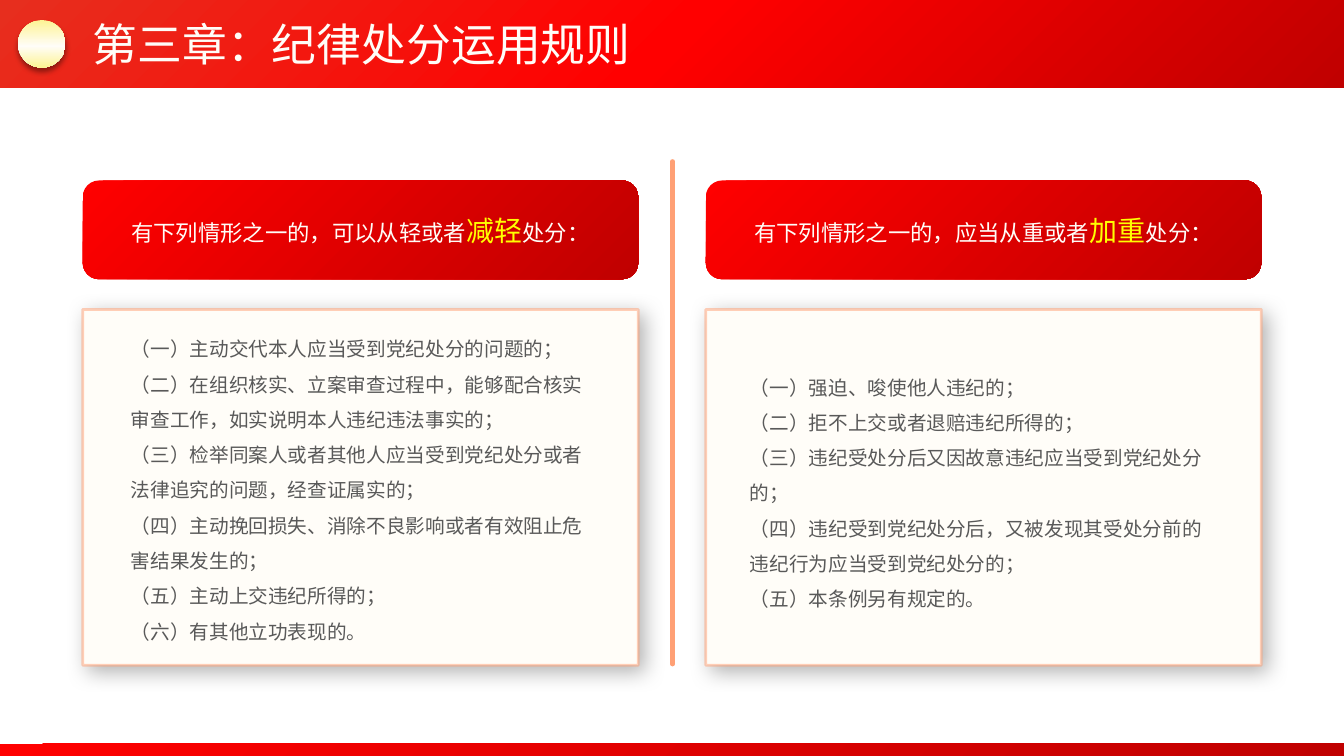
from dataclasses import dataclass

from lxml import etree
from pptx import Presentation
from pptx.dml.color import RGBColor
from pptx.enum.shapes import MSO_CONNECTOR, MSO_SHAPE
from pptx.enum.text import MSO_ANCHOR, MSO_AUTO_SIZE, PP_ALIGN
from pptx.oxml.ns import qn
from pptx.util import Inches, Pt

RECT, ROUNDED, OVAL = MSO_SHAPE.RECTANGLE, MSO_SHAPE.ROUNDED_RECTANGLE, MSO_SHAPE.OVAL
STRAIGHT = MSO_CONNECTOR.STRAIGHT
MIDDLE = MSO_ANCHOR.MIDDLE
GROW = MSO_AUTO_SIZE.SHAPE_TO_FIT_TEXT
CENTER = PP_ALIGN.CENTER


@dataclass(frozen=True)
class Theme:
    font: str = "Noto Sans CJK SC"
    cream: str = "FFFDF8"
    yellow: str = "FFFF00"
    peach: str = "FFA075"
    grey: str = "595959"
    black: str = "000000"
    red: tuple = ((0, "FF0000"), (100, "C00000"))
    header: tuple = ((0, "E72E1E"), (50, "FF0000"), (100, "C00000"))
    gold: tuple = ((0, "FDF394"), (55, "FFFDF8"), (100, "FDF394"))
    title_size: int = 32
    accent_size: int = 20
    heading_size: int = 16
    body_size: int = 14


THEME = Theme()
SLIDE_W, SLIDE_H = 13.33, 7.5
PANEL_W = 5.51

# Left edge, heading, text position and items of each panel
PANELS = [
    (0.82, ("有下列情形之一的，可以从轻或者", "减轻", "处分："), (1.2, 3.18, 4.83, 3.24), [
        "（一）主动交代本人应当受到党纪处分的问题的；",
        "（二）在组织核实、立案审查过程中，能够配合核实审查工作，如实说明本人违纪违法事实的；",
        "（三）检举同案人或者其他人应当受到党纪处分或者法律追究的问题，经查证属实的；",
        "（四）主动挽回损失、消除不良影响或者有效阻止危害结果发生的；",
        "（五）主动上交违纪所得的；",
        "（六）有其他立功表现的。",
    ]),
    (7, ("有下列情形之一的，应当从重或者", "加重", "处分："), (7.34, 3.56, 4.83, 2.54), [
        "（一）强迫、唆使他人违纪的；",
        "（二）拒不上交或者退赔违纪所得的；",
        "（三）违纪受处分后又因故意违纪应当受到党纪处分的；",
        "（四）违纪受到党纪处分后，又被发现其受处分前的违纪行为应当受到党纪处分的；",
        "（五）本条例另有规定的。",
    ]),
]


def rgb(color):
    return RGBColor.from_string(color)


def add_color(parent, color, alpha=100):
    clr = etree.SubElement(parent, qn("a:srgbClr"), val=color)
    if alpha < 100:
        etree.SubElement(clr, qn("a:alpha"), val=str(alpha * 1000))


def set_gradient(fill, props, stops, angle):
    """Clockwise gradient on a shape or run; props is the element holding the fill."""
    fill.gradient()
    fill.gradient_angle = 360 - angle
    stop_list = props.find(qn("a:gradFill")).find(qn("a:gsLst"))
    for old in list(stop_list):
        stop_list.remove(old)
    for pos, color in stops:
        add_color(etree.SubElement(stop_list, qn("a:gs"), pos=str(pos * 1000)), color)


def add_shadow(s, alpha, blur, dist, angle):
    effects = s._element.spPr.find(qn("a:effectLst"))
    shadow = etree.SubElement(
        effects, qn("a:outerShdw"), blurRad=str(Pt(blur)), dist=str(Pt(dist)),
        dir=str(angle * 60000), algn="ctr", rotWithShape="0")
    add_color(shadow, THEME.black, alpha)


def add_box(slide, kind, box, stops=None, angle=45):
    s = slide.shapes.add_shape(kind, *map(Inches, box))
    s.shadow.inherit = False
    s.line.fill.background()
    if stops:
        set_gradient(s.fill, s._element.spPr, stops, angle)
    return s


def add_text(slide, box, wrap):
    tf = slide.shapes.add_textbox(*map(Inches, box)).text_frame
    tf.word_wrap = wrap
    tf.auto_size = GROW
    return tf


def add_run(p, text, size, color):
    r = p.add_run()
    r.text = text
    r.font.size = Pt(size)
    r.font.color.rgb = rgb(color)
    r.font.name = THEME.font
    etree.SubElement(r._r.get_or_add_rPr(), qn("a:ea"), typeface=THEME.font)
    return r


def add_header(slide, title):
    add_box(slide, RECT, (0, 7.38, SLIDE_W, 0.12), THEME.red)
    add_box(slide, RECT, (0, 0, SLIDE_W, 0.87), THEME.header)
    badge = add_box(slide, OVAL, (0.18, 0.2, 0.47, 0.47), THEME.gold, 90)
    add_shadow(badge, 40, 4, 3, 90)
    tf = add_text(slide, (0.82, 0.12, 5.59, 0.64), False)
    r = add_run(tf.paragraphs[0], title, THEME.title_size, THEME.cream)
    set_gradient(r.font.fill, r._r.get_or_add_rPr(), THEME.gold, 90)


def add_card(slide, left):
    s = add_box(slide, ROUNDED, (left, 3.07, PANEL_W, 3.53))
    s.adjustments[0] = 0
    s.fill.solid()
    s.fill.fore_color.rgb = rgb(THEME.cream)
    s.line.color.rgb = rgb(THEME.peach)
    s.line.width = Pt(2)
    line_color = s._element.spPr.find(qn("a:ln")).find(qn("a:solidFill"))[0]
    etree.SubElement(line_color, qn("a:alpha"), val="50000")
    add_shadow(s, 30, 15, 5, 45)


def add_items(slide, box, items):
    tf = add_text(slide, box, True)
    for i, item in enumerate(items):
        p = tf.add_paragraph() if i else tf.paragraphs[0]
        p.line_spacing = 1.5
        add_run(p, item, THEME.body_size, THEME.grey)


def add_heading(slide, left, parts):
    s = add_box(slide, ROUNDED, (left, 1.79, PANEL_W, 0.98), THEME.red)
    tf = s.text_frame
    tf.word_wrap = True
    tf.vertical_anchor = MIDDLE
    p = tf.paragraphs[0]
    p.alignment = CENTER
    before, accent, after = parts
    add_run(p, before, THEME.heading_size, THEME.cream)
    add_run(p, accent, THEME.accent_size, THEME.yellow)
    add_run(p, after, THEME.heading_size, THEME.cream)


def add_divider(slide, x, top, bottom):
    line = slide.shapes.add_connector(STRAIGHT, *map(Inches, (x, top, x, bottom)))
    line.line.color.rgb = rgb(THEME.peach)
    line.line.width = Pt(3)
    sp_pr = line._element.spPr
    sp_pr.find(qn("a:ln")).set("cap", "rnd")
    etree.SubElement(sp_pr, qn("a:effectLst"))


def main():
    prs = Presentation()
    prs.slide_width, prs.slide_height = Inches(SLIDE_W), Inches(SLIDE_H)
    slide = prs.slides.add_slide(prs.slide_layouts[6])

    # Header and footer bars
    add_header(slide, "第三章：纪律处分运用规则")

    # Two panels with a divider between them
    for left, heading, text_box, items in PANELS:
        add_card(slide, left)
        add_items(slide, text_box, items)
        add_heading(slide, left, heading)
    add_divider(slide, 6.67, 1.6, 6.59)

    prs.save("out.pptx")


if __name__ == "__main__":
    main()
